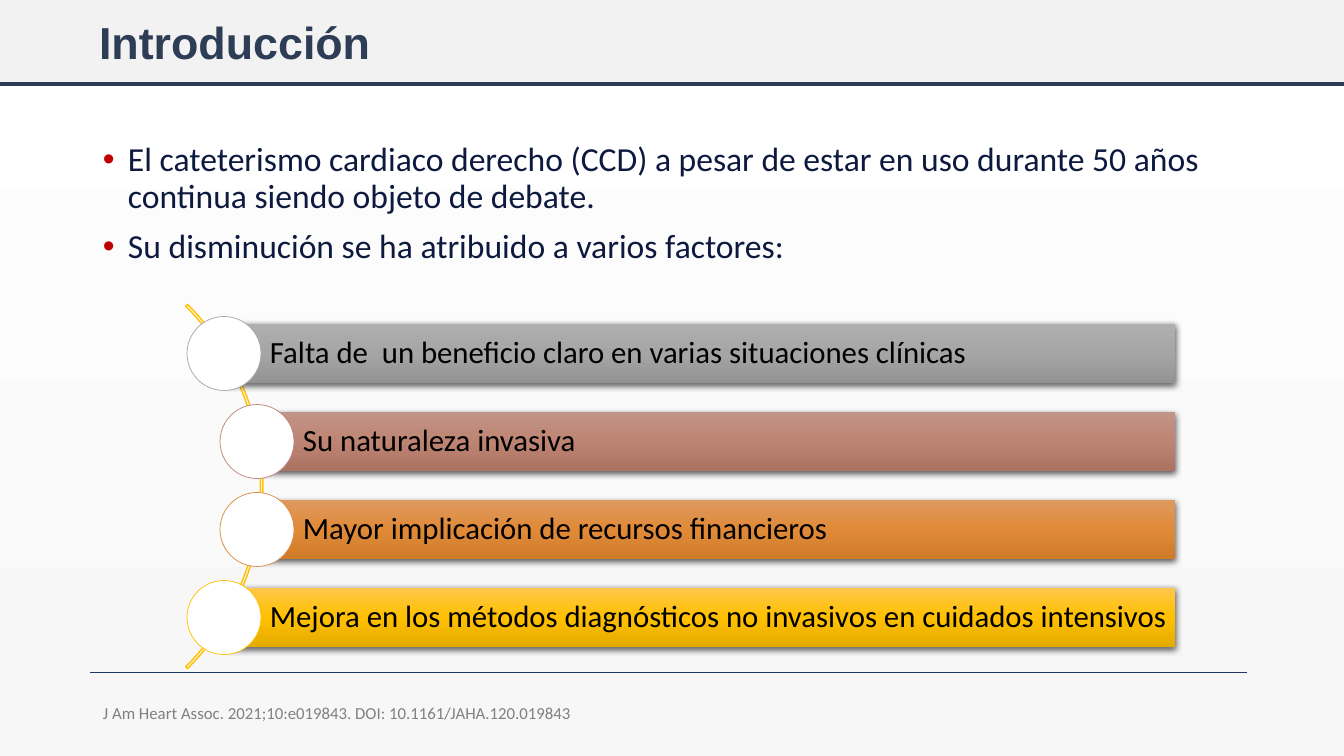
from copy import deepcopy

from lxml import etree
from pptx import Presentation, util as u
from pptx.dml.color import RGBColor
from pptx.enum import shapes, text
from pptx.oxml.ns import qn

PX = 12192000 / 1344
FACTORS = [
    ("Falta de  un beneficio claro en varias situaciones clínicas", 224,
     ("AFAFAF", "A5A5A5", "939393"), "A5A5A5"),
    ("Su naturaleza invasiva", 257,
     ("C29487", "BE8473", "AD7362"), "BB8476"),
    ("Mayor implicación de recursos financieros", 257,
     ("DE995E", "E08A38", "D07B29"), "D98A3F"),
    ("Mejora en los métodos diagnósticos no invasivos en cuidados intensivos",
     224, ("FFC74B", "FFC000", "E3AB00"), "FFC000"),
]


def px(n):
    return u.Emu(round(n * PX))


def rgb(code):
    return RGBColor.from_string(code)


def add(parent, tag, **attrs):
    node = etree.SubElement(parent, qn(tag))
    for name, value in attrs.items():
        node.set(name, str(value))
    return node


def blend(fill, colors):
    """Fill from top to bottom with evenly spaced colours."""
    fill.gradient()
    fill.gradient_angle = 270
    first = fill.gradient_stops[0]._gs
    for _ in colors[2:]:
        first.addnext(deepcopy(first))
    for i, (stop, color) in enumerate(zip(fill.gradient_stops, colors)):
        stop.color.rgb = rgb(color)
        stop.position = i / (len(colors) - 1)


def draw(slide, kind, box, fill=None, line=None, width=1):
    shape = slide.shapes.add_shape(kind, *map(px, box))
    shape.shadow.inherit = False
    if fill:
        shape.fill.solid()
        shape.fill.fore_color.rgb = rgb(fill)
    else:
        shape.fill.background()
    if line:
        shape.line.color.rgb = rgb(line)
        shape.line.width = u.Pt(width)
    else:
        shape.line.fill.background()
    return shape


def rule(slide, left, right, y, color, width):
    line = slide.shapes.add_connector(
        shapes.MSO_CONNECTOR.STRAIGHT, px(left), px(y), px(right), px(y))
    line.line.color.rgb = rgb(color)
    line.line.width = u.Pt(width)
    add(line._element.spPr, "a:effectLst")


def write(shape, *lines, size, color, font="Calibri", bold=False,
          anchor=text.MSO_ANCHOR.TOP, inset=(10, 5, 10, 5), bullet=None):
    frame = shape.text_frame
    frame.word_wrap = True
    frame.vertical_anchor = anchor
    (frame.margin_left, frame.margin_top,
     frame.margin_right, frame.margin_bottom) = map(px, inset)
    for i, line in enumerate(lines):
        para = frame.add_paragraph() if i else frame.paragraphs[0]
        para.alignment = text.PP_ALIGN.LEFT
        para.line_spacing = 0.9
        if i:
            para.space_before = u.Pt(10)
        if bullet:
            props = para._p.get_or_add_pPr()
            props.set("marL", str(px(25)))
            props.set("indent", str(-px(25)))
            add(add(props, "a:buClr"), "a:srgbClr", val=bullet)
            add(props, "a:buFont", typeface="Arial")
            add(props, "a:buChar", char="•")
        run = para.add_run()
        run.text = line
        run.font.name = font
        run.font.size = u.Pt(size)
        run.font.bold = bold
        run.font.color.rgb = rgb(color)


def label(slide, box, *lines, **style):
    write(slide.shapes.add_textbox(*map(px, box)), *lines, **style)


def header(slide, width, height):
    draw(slide, shapes.MSO_SHAPE.RECTANGLE, (0, 0, width, height), "F2F2F2")
    rule(slide, 0, width, height, "2D3D55", 3)
    label(slide, (89, 0, 1159, 90), "Introducción", size=32, color="2D3D55",
          font="Arial", bold=True, anchor=text.MSO_ANCHOR.MIDDLE)


def shade(shape):
    """Cast a soft shadow below the shape."""
    effects = shape._element.spPr.find(qn("a:effectLst"))
    cast = add(effects, "a:outerShdw", blurRad=57150, dist=19050,
               dir=5400000, algn="ctr", rotWithShape=0)
    add(add(cast, "a:srgbClr", val="000000"), "a:alpha", val=63000)


def factors(slide, top, right, height=59, pitch=88, dot=74):
    """Draw the bars, each with a disc centred on its left end."""
    arc = draw(slide, shapes.MSO_SHAPE.BLOCK_ARC, (-252, top - 95, 515, 515),
               line="FFC000")
    for i, value in enumerate((189, 27, 0.005)):
        arc.adjustments[i] = value
    for i, (words, left, colors, edge) in enumerate(FACTORS):
        y = top + i * pitch
        bar = draw(slide, shapes.MSO_SHAPE.RECTANGLE,
                   (left, y, right - left, height))
        blend(bar.fill, colors)
        shade(bar)
        write(bar, words, size=22, color="000000",
              anchor=text.MSO_ANCHOR.MIDDLE, inset=(46, 6, 6, 6))
        draw(slide, shapes.MSO_SHAPE.OVAL,
             (left - dot / 2, y + (height - dot) / 2, dot, dot),
             "FFFFFF", edge, 0.5)


def footer(slide, left, right, y):
    rule(slide, left, right, y, "203864", 0.5)
    label(slide, (left + 3, y + 28, 664, 55),
          "J Am Heart Assoc. 2021;10:e019843. DOI: 10.1161/JAHA.120.019843",
          size=12, color="808080")


def main():
    deck = Presentation()
    deck.slide_width, deck.slide_height = px(1344), px(756)
    slide = deck.slides.add_slide(deck.slide_layouts[6])
    blend(slide.background.fill, ("FFFFFF", "F7F7F7"))
    header(slide, 1344, 84)
    label(slide, (93, 138, 1159, 140),
          "El cateterismo cardiaco derecho (CCD) a pesar de estar en uso "
          "durante 50 años continua siendo objeto de debate.",
          "Su disminución se ha atribuido a varios factores:",
          size=24, color="0D193F", bullet="C00000")
    factors(slide, 324, 1175)
    footer(slide, 90, 1247, 672)
    deck.save("out.pptx")


if __name__ == "__main__":
    main()
